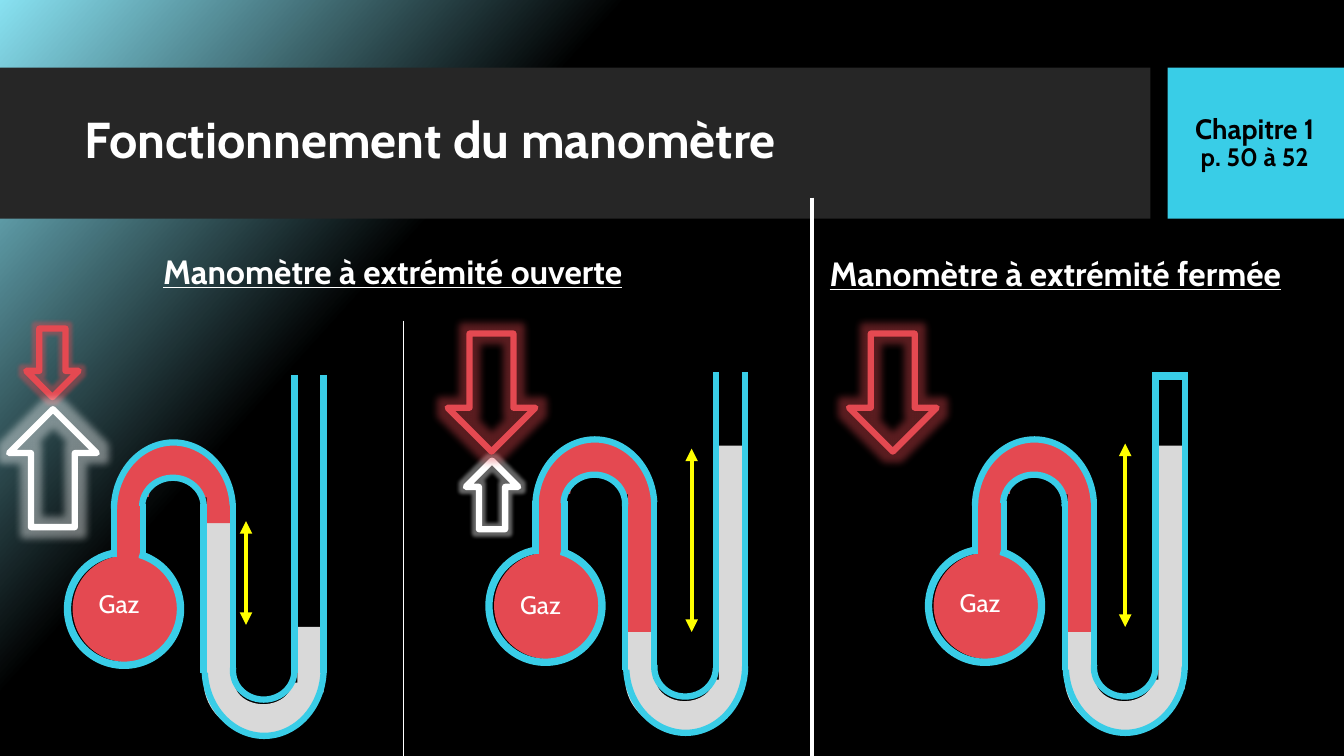
from dataclasses import dataclass

from lxml import etree
from pptx import Presentation
from pptx import util as u
from pptx.dml.color import RGBColor
from pptx.enum import shapes, text
from pptx.oxml.ns import qn
from pptx.shapes.autoshape import Shape
from pptx.shapes.connector import Connector
from pptx.slide import Slide

PX = 9144
FONT = "Cabin"
WHITE = RGBColor(0xFF, 0xFF, 0xFF)
BLACK = RGBColor(0, 0, 0)
CHARCOAL = RGBColor(0x26, 0x26, 0x26)
CYAN = RGBColor(0x39, 0xCD, 0xE7)
PALE_CYAN = RGBColor(0x88, 0xE1, 0xF1)
RED = RGBColor(0xE4, 0x49, 0x51)
MERCURY = RGBColor(0xD9, 0xD9, 0xD9)
YELLOW = RGBColor(0xFF, 0xFF, 0)
Kind = shapes.MSO_SHAPE


@dataclass(frozen=True)
class Box:
    left: int
    top: int
    width: int
    height: int

    def emu(self, dx: int = 0, dy: int = 0) -> tuple[int, ...]:
        return tuple(
            value * PX for value in (self.left + dx, self.top + dy, self.width, self.height)
        )


@dataclass(frozen=True)
class Part:
    kind: shapes.MSO_SHAPE
    box: Box
    fill: RGBColor | None = None
    line: RGBColor | None = None
    weight: float = 4.5
    adjustments: tuple[float, ...] = ()
    rotation: int = 0
    glow: int = 0


@dataclass(frozen=True)
class Line:
    x1: int
    y1: int
    x2: int
    y2: int
    color: RGBColor = CYAN
    weight: float = 4.5
    double_headed: bool = False


@dataclass(frozen=True)
class Manometer:
    left: int
    top: int
    gas_level: int
    open_level: int
    label_top: int
    closed: bool = False


@dataclass(frozen=True)
class Label:
    box: Box
    lines: tuple[str, ...]
    sizes: tuple[int, ...]
    color: RGBColor = WHITE
    bold: bool = True
    underline: bool = False
    centered: bool = False
    anchor: text.MSO_ANCHOR = text.MSO_ANCHOR.MIDDLE
    spacing: float = 0.9


BANNERS = (
    Part(Kind.RECTANGLE, Box(0, 67, 1141, 150), CHARCOAL),
    Part(Kind.RECTANGLE, Box(1158, 67, 175, 150), CYAN),
)
LABELS = (
    Label(Box(74, 82, 1051, 118), ("Fonctionnement du manomètre",), (36,)),
    Label(Box(152, 233, 526, 76), ("Manomètre à extrémité ouverte",), (24,), underline=True),
    Label(Box(813, 235, 514, 76), ("Manomètre à extrémité fermée",), (24,), underline=True),
    Label(Box(1156, 67, 177, 151), ("Chapitre 1", "p. 50 à 52"), (20, 18), BLACK, centered=True),
)
PRESSURE_ARROWS = (
    Part(Kind.DOWN_ARROW, Box(26, 326, 52, 68), line=RED, glow=7),
    Part(Kind.UP_ARROW, Box(9, 406, 87, 117), line=WHITE, glow=15),
    Part(Kind.UP_ARROW, Box(462, 457, 52, 68), line=WHITE, glow=7),
    Part(Kind.DOWN_ARROW, Box(444, 331, 87, 117), line=RED, glow=15),
    Part(Kind.DOWN_ARROW, Box(842, 331, 87, 117), line=RED, glow=15),
)
LINES = (
    Line(805, 196, 805, 750, WHITE, 3),
    Line(400, 318, 400, 750, WHITE, 0.75),
    Line(244, 517, 244, 620, YELLOW, 3, True),
    Line(686, 445, 686, 627, YELLOW, 3, True),
    Line(1116, 440, 1116, 622, YELLOW, 3, True),
)
MANOMETERS = (
    Manometer(64, 545, gas_level=-26, open_level=77, label_top=34),
    Manometer(482, 542, gas_level=85, open_level=-100, label_top=38),
    Manometer(918, 542, gas_level=85, open_level=-100, label_top=36, closed=True),
)
COLUMN_BOTTOM = 142
HALF_RING = (108.66, 0, 0.29)
OUTER_ARC = (108.4, 213.67)
INNER_ARC = (108.4, 3.5)
BULB_RING = (171.93, 156.56, 0.05)
GLASS = (
    Part(Kind.BLOCK_ARC, Box(0, 0, 118, 118), CYAN, CYAN, 1, BULB_RING),
    Part(Kind.ARC, Box(49, -106, 118, 133), line=CYAN, adjustments=OUTER_ARC),
    Part(Kind.ARC, Box(77, -71, 61, 57), line=CYAN, adjustments=INNER_ARC),
    Part(Kind.ARC, Box(139, 52, 118, 133), line=CYAN, adjustments=OUTER_ARC, rotation=180),
    Part(Kind.ARC, Box(167, 92, 61, 57), line=CYAN, adjustments=INNER_ARC, rotation=180),
)
WALLS = tuple(
    Line(x, top, x, bottom)
    for pair, top, bottom in (((49, 78), -45, 8), ((138, 167), -45, 123), ((228, 257), -173, 123))
    for x in pair
)
CAP = Line(230, -169, 257, -169, weight=6)


def draw_part(collection, part: Part, dx: int = 0, dy: int = 0) -> Shape:
    shape = collection.add_shape(part.kind, *part.box.emu(dx, dy))
    shape.shadow.inherit = False
    shape.rotation = part.rotation
    for index, value in enumerate(part.adjustments):
        shape.adjustments[index] = value
    if part.fill is None:
        shape.fill.background()
    else:
        shape.fill.solid()
        shape.fill.fore_color.rgb = part.fill
    if part.line is None:
        shape.line.fill.background()
    else:
        shape.line.color.rgb = part.line
        shape.line.width = u.Pt(part.weight)
    if part.glow:
        effects = shape._element.spPr.find(qn("a:effectLst"))
        glow = etree.SubElement(effects, qn("a:glow"), rad=str(part.glow * PX))
        color = etree.SubElement(glow, qn("a:srgbClr"), val=str(part.line))
        etree.SubElement(color, qn("a:alpha"), val="40000")
    return shape


def draw_line(collection, line: Line, dx: int = 0, dy: int = 0) -> Connector:
    ends = (line.x1 + dx, line.y1 + dy, line.x2 + dx, line.y2 + dy)
    connector = collection.add_connector(
        shapes.MSO_CONNECTOR.STRAIGHT, *(value * PX for value in ends)
    )
    connector.line.color.rgb = line.color
    connector.line.width = u.Pt(line.weight)
    if line.double_headed:
        for end in ("a:headEnd", "a:tailEnd"):
            etree.SubElement(connector.line._get_or_add_ln(), qn(end), type="triangle")
    etree.SubElement(connector._element.spPr, qn("a:effectLst"))
    return connector


def draw_label(collection, label: Label, dx: int = 0, dy: int = 0) -> None:
    frame = collection.add_textbox(*label.box.emu(dx, dy)).text_frame
    frame.word_wrap = True
    frame.vertical_anchor = label.anchor
    frame.text = "\n".join(label.lines)
    for paragraph, size in zip(frame.paragraphs, label.sizes):
        paragraph.line_spacing = label.spacing
        paragraph.alignment = text.PP_ALIGN.CENTER if label.centered else text.PP_ALIGN.LEFT
        paragraph.font.name = FONT
        paragraph.font.size = u.Pt(size)
        paragraph.font.bold = label.bold
        paragraph.font.underline = label.underline
        paragraph.font.color.rgb = label.color


def draw_manometer(slide: Slide, manometer: Manometer) -> None:
    gas, opening = manometer.gas_level, manometer.open_level
    contents = (
        Part(Kind.OVAL, Box(8, 6, 108, 106), RED),
        Part(Kind.RECTANGLE, Box(51, -54, 25, 62), RED),
        Part(Kind.BLOCK_ARC, Box(53, -104, 111, 105), RED, adjustments=HALF_RING),
        Part(Kind.RECTANGLE, Box(140, gas, 26, COLUMN_BOTTOM - gas), MERCURY),
        Part(Kind.BLOCK_ARC, Box(138, 79, 118, 105), MERCURY, adjustments=HALF_RING, rotation=180),
        Part(Kind.RECTANGLE, Box(231, opening, 26, COLUMN_BOTTOM - opening), MERCURY),
        Part(Kind.RECTANGLE, Box(141, -54, 24, gas + 54), RED),
    )
    collection = slide.shapes.add_group_shape().shapes
    for part in contents + GLASS:
        draw_part(collection, part, manometer.left, manometer.top)
    for wall in WALLS + ((CAP,) if manometer.closed else ()):
        draw_line(collection, wall, manometer.left, manometer.top)
    gas_label = Label(Box(24, manometer.label_top, 69, 41), ("Gaz",), (18,), bold=False,
                      anchor=text.MSO_ANCHOR.TOP, spacing=1.0)
    draw_label(collection, gas_label, manometer.left, manometer.top)


def paint_background(slide: Slide) -> None:
    fill = slide.background.fill
    fill.gradient()
    fill.gradient_angle = 318
    for stop, color, position in zip(fill.gradient_stops, (PALE_CYAN, BLACK), (0, 0.31)):
        stop.color.rgb = color
        stop.position = position


def main() -> None:
    presentation = Presentation()
    presentation.slide_width, presentation.slide_height = 1333 * PX, 750 * PX
    slide = presentation.slides.add_slide(presentation.slide_layouts[6])
    paint_background(slide)
    for banner in BANNERS:
        draw_part(slide.shapes, banner)
    for manometer in MANOMETERS:
        draw_manometer(slide, manometer)
    for label in LABELS:
        draw_label(slide.shapes, label)
    for arrow in PRESSURE_ARROWS:
        draw_part(slide.shapes, arrow)
    for line in LINES:
        draw_line(slide.shapes, line)
    presentation.save("out.pptx")


if __name__ == "__main__":
    main()
